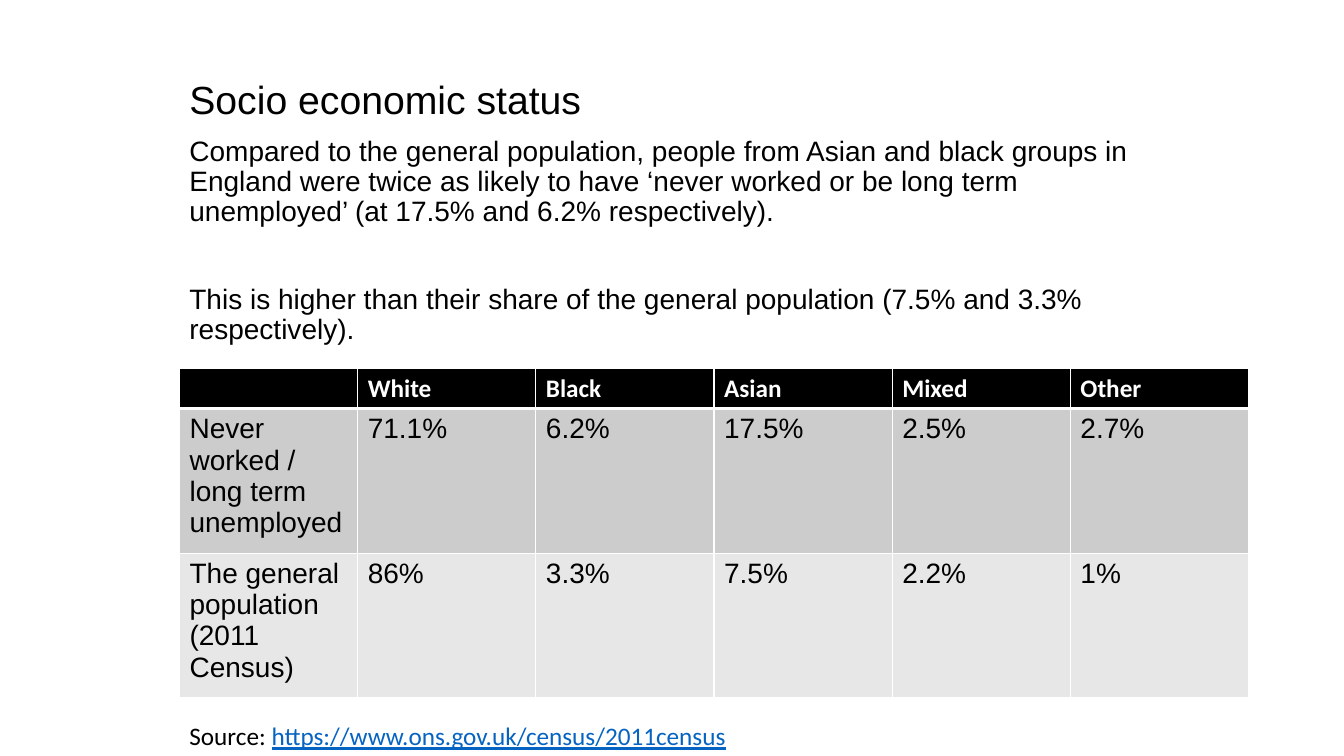
import dataclasses

import lxml.etree
import pptx
import pptx.dml.color
import pptx.oxml.ns
import pptx.util

Pt = pptx.util.Pt

COLOURS = {
    "ink": "000000",
    "paper": "FFFFFF",
    "link": "0563C1",
    "worked": "CCCCCC",
    "population": "E7E7E7",
}
LEFT = 128.2
COLUMN_WIDTH = 127.3


@dataclasses.dataclass(frozen=True)
class Passage:
    text: str
    font: dict
    colour: str = "ink"
    space_before: float = 10


@dataclasses.dataclass(frozen=True)
class Group:
    values: tuple[str, ...]
    height: float
    fill: str
    font: dict
    colour: str = "ink"
    top_line: float = 1
    bottom_line: float = 1


HEADING = {"name": "Arial", "size": Pt(28), "bold": False}
BODY = {"name": "Arial", "size": Pt(20), "bold": False}
HEADER = {"name": "Calibri", "size": Pt(18), "bold": True}
CITATION = {"name": "Calibri", "size": Pt(18), "bold": False}
LINK = CITATION | {"underline": True}

PASSAGES = [
    Passage("Socio economic status", HEADING),
    Passage(
        "Compared to the general population, people from Asian and black groups in "
        "England were twice as likely to have ‘never worked or be long term "
        "unemployed’ (at 17.5% and 6.2% respectively).",
        BODY,
    ),
    Passage(
        "This is higher than their share of the general population "
        "(7.5% and 3.3% respectively).",
        BODY,
        space_before=41,
    ),
]
GROUPS = [
    Group(("", "White", "Black", "Asian", "Mixed", "Other"),
          28.5, "ink", HEADER, "paper", bottom_line=3),
    Group(("Never worked / long term unemployed", "71.1%", "6.2%", "17.5%", "2.5%", "2.7%"),
          96.5, "worked", BODY, top_line=3),
    Group(("The general population (2011 Census)", "86%", "3.3%", "7.5%", "2.2%", "1%"),
          96.5, "population", BODY),
]
SOURCE = [
    Passage("Source: ", CITATION),
    Passage("https://www.ons.gov.uk/census/2011census", LINK, "link"),
]


def rgb(colour: str) -> pptx.dml.color.RGBColor:
    return pptx.dml.color.RGBColor.from_string(COLOURS[colour])


def add_run(paragraph, text: str, font: dict, colour: str) -> None:
    run = paragraph.add_run()
    run.text = text
    for attribute, value in font.items():
        setattr(run.font, attribute, value)
    run.font.color.rgb = rgb(colour)


def add_frame(slide, top: float, width: float, height: float, wrap: bool):
    frame = slide.shapes.add_textbox(Pt(LEFT), Pt(top), Pt(width), Pt(height)).text_frame
    frame.word_wrap = wrap
    return frame


def draw_passages(slide, passages: list[Passage]) -> None:
    frame = add_frame(slide, 54, 720, 417.6, True)
    for index, passage in enumerate(passages):
        paragraph = frame.add_paragraph() if index else frame.paragraphs[0]
        paragraph.line_spacing = 0.9
        paragraph.space_before = Pt(passage.space_before)
        add_run(paragraph, passage.text, passage.font, passage.colour)


def draw_borders(cell, group: Group) -> None:
    properties = cell._tc.get_or_add_tcPr()
    qn = pptx.oxml.ns.qn
    widths = {"lnL": 1, "lnR": 1, "lnT": group.top_line, "lnB": group.bottom_line}
    for position, (side, width) in enumerate(widths.items()):
        line = lxml.etree.Element(qn(f"a:{side}"), w=str(Pt(width)))
        solid = lxml.etree.SubElement(line, qn("a:solidFill"))
        lxml.etree.SubElement(solid, qn("a:srgbClr"), val=COLOURS["paper"])
        properties.insert(position, line)


def draw_groups(slide, groups: list[Group]) -> None:
    columns = len(groups[0].values)
    height = sum(group.height for group in groups)
    shares = slide.shapes.add_table(
        len(groups), columns, Pt(LEFT), Pt(263), Pt(COLUMN_WIDTH * columns), Pt(height)
    ).table
    for column in shares.columns:
        column.width = Pt(COLUMN_WIDTH)
    for row, group in zip(shares.rows, groups):
        row.height = Pt(group.height)
        for cell, value in zip(row.cells, group.values):
            cell.fill.solid()
            cell.fill.fore_color.rgb = rgb(group.fill)
            draw_borders(cell, group)
            if value:
                add_run(cell.text_frame.paragraphs[0], value, group.font, group.colour)


def draw_source(slide, passages: list[Passage]) -> None:
    paragraph = add_frame(slide, 511.2, 409.7, 28.8, False).paragraphs[0]
    for passage in passages:
        add_run(paragraph, passage.text, passage.font, passage.colour)


def main() -> None:
    deck = pptx.Presentation()
    deck.slide_width, deck.slide_height = Pt(960), Pt(540)
    slide = deck.slides.add_slide(deck.slide_layouts[6])
    draw_passages(slide, PASSAGES)
    draw_groups(slide, GROUPS)
    draw_source(slide, SOURCE)
    deck.save("out.pptx")


if __name__ == "__main__":
    main()
